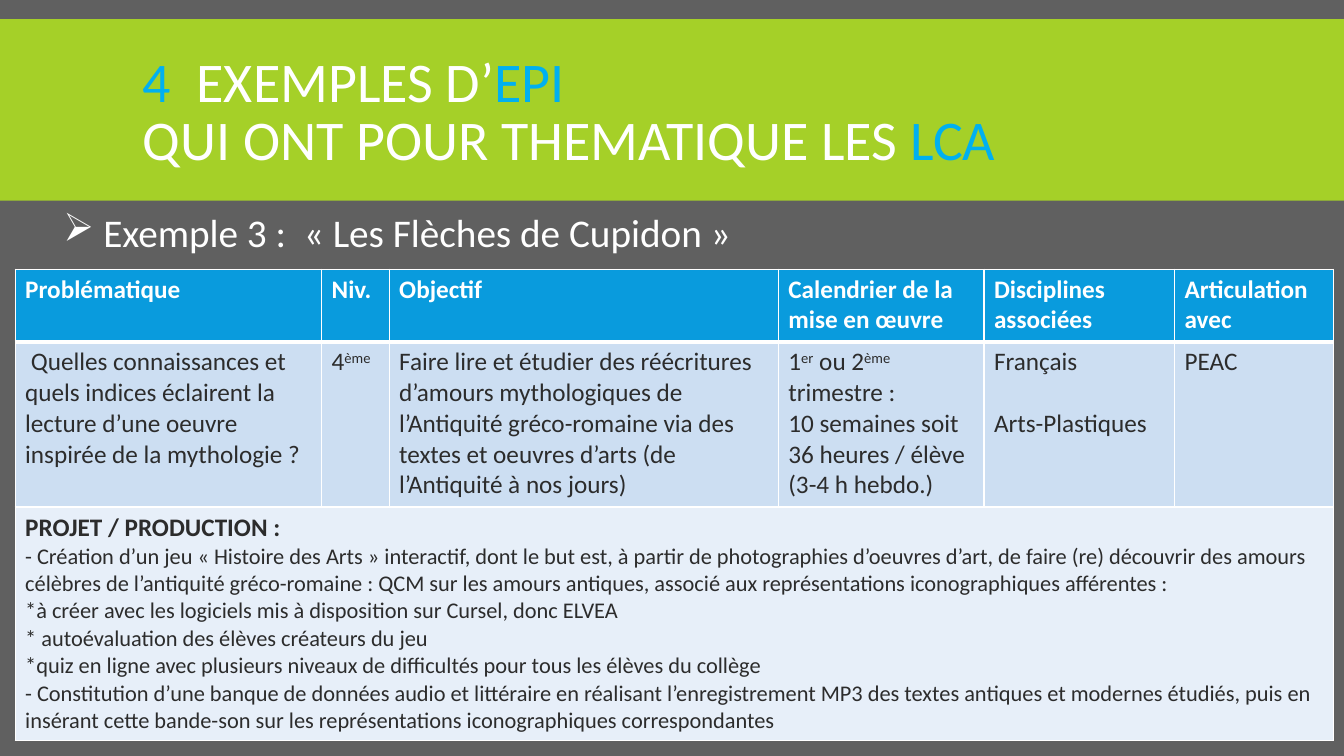
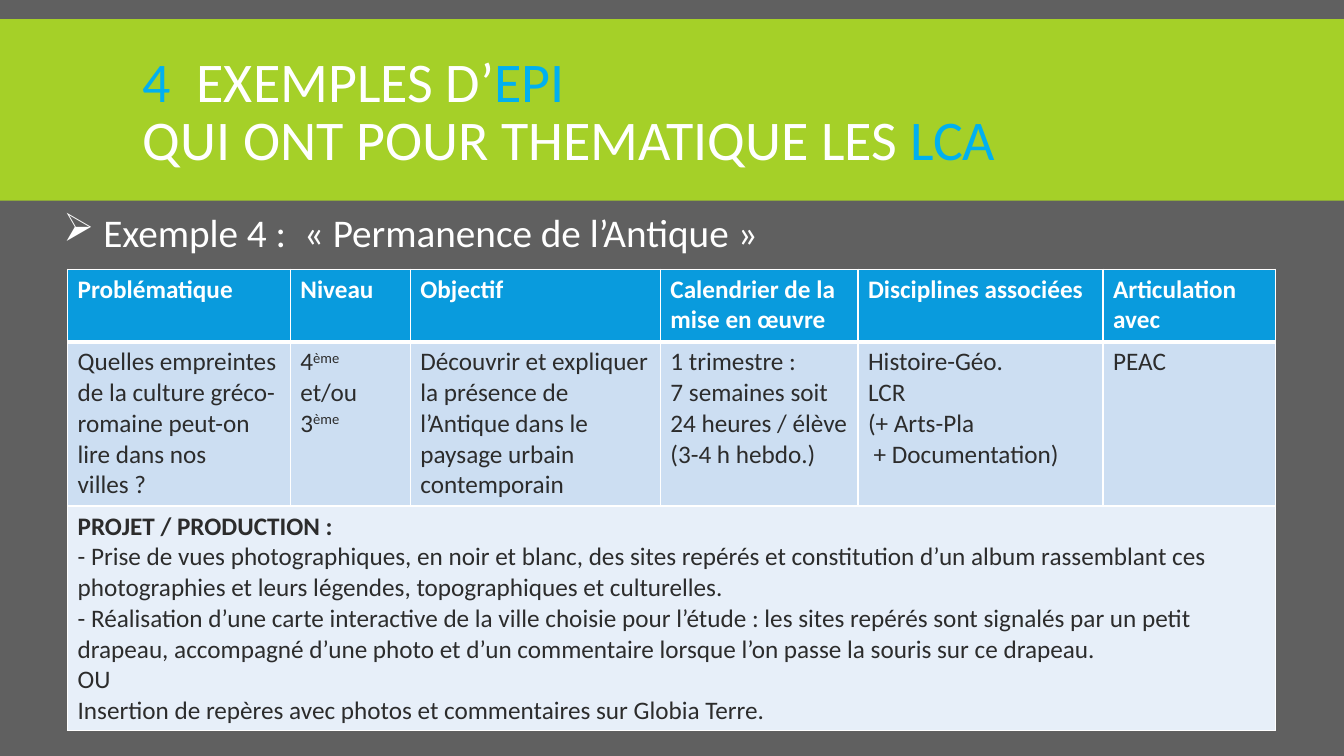
from lxml import etree
from pptx import Presentation
from pptx.dml.color import RGBColor
from pptx.enum.shapes import MSO_SHAPE
from pptx.enum.text import MSO_ANCHOR
from pptx.oxml.ns import qn
from pptx.util import Inches, Pt

RECTANGLE = MSO_SHAPE.RECTANGLE
MIDDLE = MSO_ANCHOR.MIDDLE

FONT = "Calibri"
WHITE, GREY, GREEN, SKY = "FFFFFF", "606060", "A5D028", "00B0F0"
HEADER, INK, ROW, PROJECT = "099BDD", "2C2C2C", "CCDEF2", "E7EFF9"

TITLE_LINES = [
    [("4  ", SKY), ("EXEMPLES D’", WHITE), ("EPI", SKY)],
    [("QUI ONT POUR THEMATIQUE LES ", WHITE), ("LCA", SKY)],
]
PROJECT_HEADING = "PROJET / PRODUCTION :"

EXAMPLES = [
    {
        "heading": " Exemple 3 :  « Les Flèches de Cupidon »",
        "left": 0.15,
        "columns": [3.04, 0.67, 3.86, 2.04, 1.89, 1.58],
        "rows": [0.72, 1.64, 2.32],
        "level": "Niv.",
        "details": [
            [" Quelles connaissances et quels indices éclairent la lecture d’une oeuvre "
             "inspirée de la mythologie ?"],
            ["4^ème"],
            ["Faire lire et étudier des réécritures d’amours mythologiques de l’Antiquité "
             "gréco-romaine via des textes et oeuvres d’arts (de l’Antiquité à nos jours)"],
            ["1^er^ ou 2^ème^ trimestre :",
             "10 semaines soit 36 heures / élève (3-4 h hebdo.)"],
            ["Français", "Arts-Plastiques"],
            ["PEAC"],
        ],
        "discipline_gap": 22,
        "project_size": 16,
        "project": [
            "- Création d’un jeu « Histoire des Arts » interactif, dont le but est, à partir de "
            "photographies d’oeuvres d’art, de faire (re) découvrir des amours célèbres de "
            "l’antiquité gréco-romaine : QCM sur les amours antiques, associé aux "
            "représentations iconographiques afférentes :",
            "*à créer avec les logiciels mis à disposition sur Cursel, donc ELVEA",
            "* autoévaluation des élèves créateurs du jeu",
            "*quiz en ligne avec plusieurs niveaux de difficultés pour tous les élèves du collège",
            "- Constitution d’une banque de données audio et littéraire en réalisant "
            "l’enregistrement MP3 des textes antiques et modernes étudiés, puis en insérant "
            "cette bande-son sur les représentations iconographiques correspondantes",
        ],
    },
    {
        "heading": " Exemple 4 :  « Permanence de l’Antique »",
        "left": 0.67,
        "columns": [2.21, 1.19, 2.48, 1.96, 2.43, 1.71],
        "rows": [0.72, 1.63, 2.23],
        "level": "Niveau",
        "details": [
            ["Quelles empreintes de la culture gréco-romaine peut-on lire dans nos villes ?"],
            ["4^ème", "et/ou", "3^ème"],
            ["Découvrir et expliquer la présence de l’Antique dans le paysage urbain "
             "contemporain"],
            ["1 trimestre :", "7 semaines soit 24 heures / élève (3-4 h hebdo.)"],
            ["Histoire-Géo.", "LCR", "(+ Arts-Pla", " + Documentation)"],
            ["PEAC"],
        ],
        "discipline_gap": 0,
        "project_size": 18,
        "project": [
            "- Prise de vues photographiques, en noir et blanc, des sites repérés et "
            "constitution d’un album rassemblant ces photographies et leurs légendes, "
            "topographiques et culturelles.",
            "- Réalisation d’une carte interactive de la ville choisie pour l’étude : les sites "
            "repérés sont signalés par un petit drapeau, accompagné d’une photo et d’un "
            "commentaire lorsque l’on passe la souris sur ce drapeau.",
            "OU",
            "Insertion de repères avec photos et commentaires sur Globia Terre.",
        ],
    },
]


def color(value):
    """Turn a hex string into a colour."""
    return RGBColor.from_string(value)


class Pages:
    """Hold the deck, its style and the current page."""

    def __init__(self):
        """Start an empty wide deck."""
        self.deck = Presentation()
        self.deck.slide_width = Inches(13.33)
        self.deck.slide_height = Inches(7.5)
        self.page = None

    def add_page(self):
        """Add a page with the grey background, green band and title."""
        self.page = self.deck.slides.add_slide(self.deck.slide_layouts[6])
        background = self.page.background.fill
        background.solid()
        background.fore_color.rgb = color(GREY)
        band = self.page.shapes.add_shape(
            RECTANGLE, 0, Inches(0.19), self.deck.slide_width, Inches(1.8))
        band.shadow.inherit = False
        band.fill.solid()
        band.fill.fore_color.rgb = color(GREEN)
        band.line.fill.background()
        self.title()

    def text_box(self, left, top, width, height):
        """Add a wrapping text box and return its frame."""
        box = self.page.shapes.add_textbox(
            Inches(left), Inches(top), Inches(width), Inches(height))
        box.text_frame.word_wrap = True
        return box.text_frame

    def style(self, para, size, ink, bold=False):
        """Set the font of a paragraph."""
        para.font.name = FONT
        para.font.size = Pt(size)
        para.font.color.rgb = color(ink)
        para.font.bold = bold

    def title(self):
        """Set the two-colour title shared by all pages."""
        frame = self.text_box(1.32, 0.31, 10.7, 1.65)
        frame.vertical_anchor = MIDDLE
        para = frame.paragraphs[0]
        para.line_spacing = 0.85
        self.style(para, 40, WHITE)
        for number, line in enumerate(TITLE_LINES):
            if number:
                para.add_line_break()
            for text, ink in line:
                span = para.add_run()
                span.text = text
                span.font.color.rgb = color(ink)

    def heading(self, text):
        """Set the arrow-bulleted heading above the table."""
        para = self.text_box(0.53, 2.07, 12.2, 0.55).paragraphs[0]
        para.text = text
        para.line_spacing = 0.9
        self.style(para, 28, WHITE)
        properties = para._p.get_or_add_pPr()
        properties.set("marL", str(Inches(0.2)))
        properties.set("indent", str(-Inches(0.2)))
        bullet = etree.Element(qn("a:buChar"), char="➢")
        properties.find(qn("a:defRPr")).addprevious(bullet)

    def borders(self, cell, top, bottom):
        """Draw white borders around a cell."""
        properties = cell._tc.get_or_add_tcPr()
        for side, width in (("L", 1), ("R", 1), ("T", top), ("B", bottom)):
            line = etree.SubElement(properties, qn(f"a:ln{side}"), w=str(Pt(width)))
            fill = etree.SubElement(line, qn("a:solidFill"))
            etree.SubElement(fill, qn("a:srgbClr"), val=WHITE)

    def cell_text(self, cell, lines, size=18, ink=INK, bold=False):
        """Append lines to a cell, raising the text between carets."""
        frame = cell.text_frame
        for text in lines:
            para = frame.add_paragraph() if cell.text else frame.paragraphs[0]
            self.style(para, size, ink, bold)
            for number, part in enumerate(text.split("^")):
                if part:
                    span = para.add_run()
                    span.text = part
                    if number % 2:
                        span._r.get_or_add_rPr().set("baseline", "30000")

    def table(self, example):
        """Add the table that describes one example."""
        columns, rows = example["columns"], example["rows"]
        table = self.page.shapes.add_table(
            len(rows), len(columns), Inches(example["left"]), Inches(2.67),
            Inches(sum(columns)), Inches(sum(rows))).table
        for column, width in zip(table.columns, columns):
            column.width = Inches(width)
        row_styles = [(HEADER, 1, 3), (ROW, 3, 1), (PROJECT, 1, 1)]
        for row, height, (fill, top, bottom) in zip(table.rows, rows, row_styles):
            row.height = Inches(height)
            for cell in row.cells:
                self.borders(cell, top, bottom)
                cell.fill.solid()
                cell.fill.fore_color.rgb = color(fill)

        headers = ["Problématique", example["level"], "Objectif",
                   "Calendrier de la mise en œuvre", "Disciplines associées",
                   "Articulation avec"]
        for index, (header, lines) in enumerate(zip(headers, example["details"])):
            self.cell_text(table.cell(0, index), [header], ink=WHITE, bold=True)
            self.cell_text(table.cell(1, index), lines)
        disciplines = table.cell(1, 4).text_frame.paragraphs
        disciplines[1].space_before = Pt(example["discipline_gap"])

        project = table.cell(2, 0)
        project.merge(table.cell(2, len(columns) - 1))
        self.cell_text(project, [PROJECT_HEADING], bold=True)
        self.cell_text(project, example["project"], size=example["project_size"])


def main():
    """Build one page for each example."""
    pages = Pages()
    for example in EXAMPLES:
        pages.add_page()
        pages.heading(example["heading"])
        pages.table(example)
    pages.deck.save("out.pptx")


if __name__ == "__main__":
    main()
